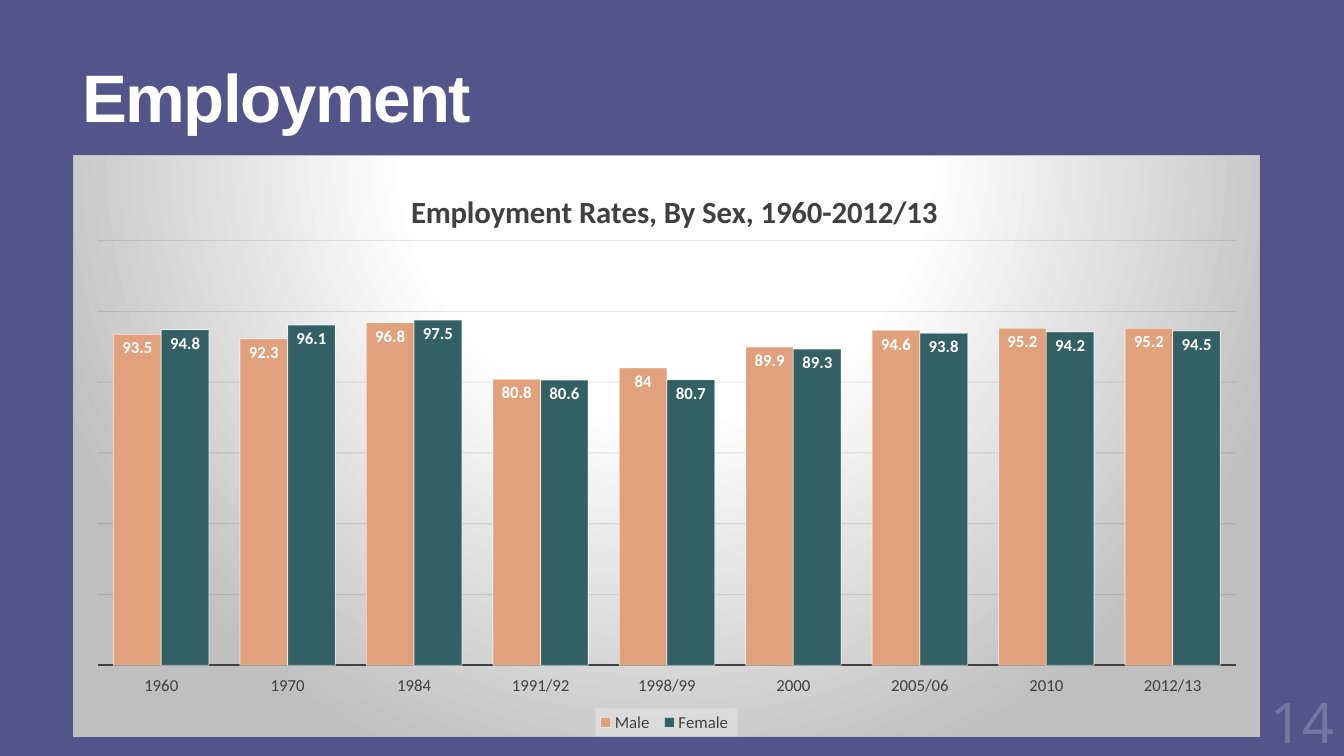
from lxml.etree import SubElement
from pptx import Presentation
from pptx.chart.data import CategoryChartData
from pptx.dml.color import RGBColor
from pptx.enum.chart import XL_CHART_TYPE as ChartType, XL_LABEL_POSITION as LabelPos
from pptx.enum.chart import XL_LEGEND_POSITION as LegendPos, XL_TICK_LABEL_POSITION as TickLabels
from pptx.enum.chart import XL_TICK_MARK as TickMark
from pptx.enum.text import MSO_ANCHOR as Anchor, PP_ALIGN as Align
from pptx.oxml import parse_xml
from pptx.oxml.ns import nsdecls, qn
from pptx.util import Inches, Pt

WIDTH, HEIGHT = 13.33, 7.5
LEFT, CONTENT_WIDTH = 0.72, 11.78
YEARS = ["1960", "1970", "1984", "1991/92", "1998/99", "2000", "2005/06", "2010", "2012/13"]
RATES = {
    "Male ": ([93.5, 92.3, 96.8, 80.8, 84, 89.9, 94.6, 95.2, 95.2], "E1A17C"),
    "Female ": ([94.8, 96.1, 97.5, 80.6, 80.7, 89.3, 93.8, 94.2, 94.5], "326065"),
}


def color(value):
    return RGBColor.from_string(value)


def style_font(font, size, ink, bold=False, name="Calibri"):
    font.size, font.bold, font.name = Pt(size), bold, name
    font.color.rgb = color(ink)


def style_line(line, ink, width, opacity=100):
    line.color.rgb = color(ink)
    line.width = Pt(width)
    if opacity < 100:
        set_opacity(line.fill, opacity)


def set_opacity(fill, percent):
    srgb = next(fill._xPr.iter(qn("a:srgbClr")))
    SubElement(srgb, qn("a:alpha")).set("val", str(percent * 1000))


def set_layout(parent, index, **shares):
    for old in parent.findall(qn("c:layout")):
        parent.remove(old)
    layout = parse_xml(f"<c:layout {nsdecls('c')}><c:manualLayout/></c:layout>")
    manual = layout[0]
    if "w" in shares:
        SubElement(manual, qn("c:layoutTarget")).set("val", "inner")
    for axis in "xy":
        SubElement(manual, qn(f"c:{axis}Mode")).set("val", "edge")
    for key, share in shares.items():
        SubElement(manual, qn(f"c:{key}")).set("val", str(share))
    parent.insert(index, layout)


def add_text(slide, box, text, size, ink, bold=False, name="Calibri", align=Align.LEFT):
    frame = slide.shapes.add_textbox(*map(Inches, box)).text_frame
    frame.word_wrap = True
    frame.vertical_anchor = Anchor.MIDDLE
    frame.text = text
    paragraph = frame.paragraphs[0]
    paragraph.alignment = align
    style_font(paragraph.runs[0].font, size, ink, bold, name)
    return paragraph


def add_heading(slide, box):
    heading = add_text(slide, box, "Employment", 48, "FFFFFF", True, "Arial")
    heading.line_spacing = 0.85
    heading.runs[0].font._element.set("spc", "-120")


def paint_chart_area(chart):
    stops = "".join(
        f'<a:gs pos="{position * 1000}"><a:srgbClr val="{ink}"/></a:gs>'
        for position, ink in [(0, "FFFFFF"), (39, "FFFFFF"), (100, "BFBFBF")]
    )
    area = parse_xml(
        f'<c:spPr {nsdecls("c", "a")}><a:gradFill><a:gsLst>{stops}</a:gsLst>'
        '<a:path path="circle"><a:fillToRect l="50000" t="-80000" r="50000" b="180000"/></a:path>'
        '</a:gradFill><a:ln w="9525"><a:solidFill><a:srgbClr val="BFBFBF"/></a:solidFill></a:ln></c:spPr>'
    )
    chart._chartSpace.find(qn("c:chart")).addnext(area)


def style_title(chart):
    chart.has_title = True
    frame = chart.chart_title.text_frame
    frame.text = "Employment Rates, By Sex, 1960-2012/13"
    style_font(frame.paragraphs[0].runs[0].font, 22, "404040", True)
    chart.chart_title.include_in_layout = False
    set_layout(chart.chart_title._element, 1, x=0.28, y=0.05)


def style_axes(chart):
    years, rates = chart.category_axis, chart.value_axis
    years.major_tick_mark = years.minor_tick_mark = TickMark.NONE
    years.tick_label_position = TickLabels.LOW
    style_font(years.tick_labels.font, 12, "404040")
    style_line(years.format.line, "404040", 1.5)
    rates.minimum_scale, rates.maximum_scale, rates.major_unit = 0, 120, 20
    rates.has_major_gridlines = True
    style_line(rates.major_gridlines.format.line, "0D0D0D", 0.75, 10)
    rates.visible = False


def style_legend(chart):
    chart.has_legend = True
    legend = chart.legend
    legend.position = LegendPos.BOTTOM
    legend.include_in_layout = False
    style_font(legend.font, 12, "404040")
    backing = parse_xml(
        f'<c:spPr {nsdecls("c", "a")}><a:solidFill><a:srgbClr val="F2F2F2">'
        '<a:alpha val="39000"/></a:srgbClr></a:solidFill></c:spPr>'
    )
    legend._element.find(qn("c:txPr")).addprevious(backing)


def style_bars(chart):
    plot = chart.plots[0]
    plot.gap_width, plot.overlap, plot.vary_by_categories = 65, 0, False
    for sex, (_, ink) in zip(plot.series, RATES.values()):
        sex.format.fill.solid()
        sex.format.fill.fore_color.rgb = color(ink)
        style_line(sex.format.line, "FFFFFF", 0.75, 50)
        labels = sex.data_labels
        labels.show_value = True
        labels.position = LabelPos.INSIDE_END
        style_font(labels.font, 12, "FFFFFF", True)


def add_rates_chart(slide, box):
    data = CategoryChartData()
    data.categories = YEARS
    for sex, (values, _) in RATES.items():
        data.add_series(sex, values)
    chart = slide.shapes.add_chart(ChartType.COLUMN_CLUSTERED, *map(Inches, box), data).chart
    style_font(chart.font, 10, "FFFFFF")
    paint_chart_area(chart)
    style_title(chart)
    style_axes(chart)
    style_legend(chart)
    style_bars(chart)
    plot_area = chart._chartSpace.find(qn("c:chart")).find(qn("c:plotArea"))
    set_layout(plot_area, 0, x=0.021, y=0.146, w=0.959, h=0.732)


def add_page_number(slide, box):
    add_text(slide, box, "14", 40, "7576A1", name="Calibri Light", align=Align.RIGHT)


def main():
    deck = Presentation()
    deck.slide_width, deck.slide_height = Inches(WIDTH), Inches(HEIGHT)
    slide = deck.slides.add_slide(deck.slide_layouts[6])
    slide.background.fill.solid()
    slide.background.fill.fore_color.rgb = color("53548A")
    add_heading(slide, (LEFT, 0.11, CONTENT_WIDTH, 1.81))
    add_rates_chart(slide, (LEFT, 1.54, CONTENT_WIDTH, 5.77))
    add_page_number(slide, (WIDTH - 1, HEIGHT - 0.7, 1, 0.7))
    deck.save("out.pptx")


if __name__ == "__main__":
    main()
